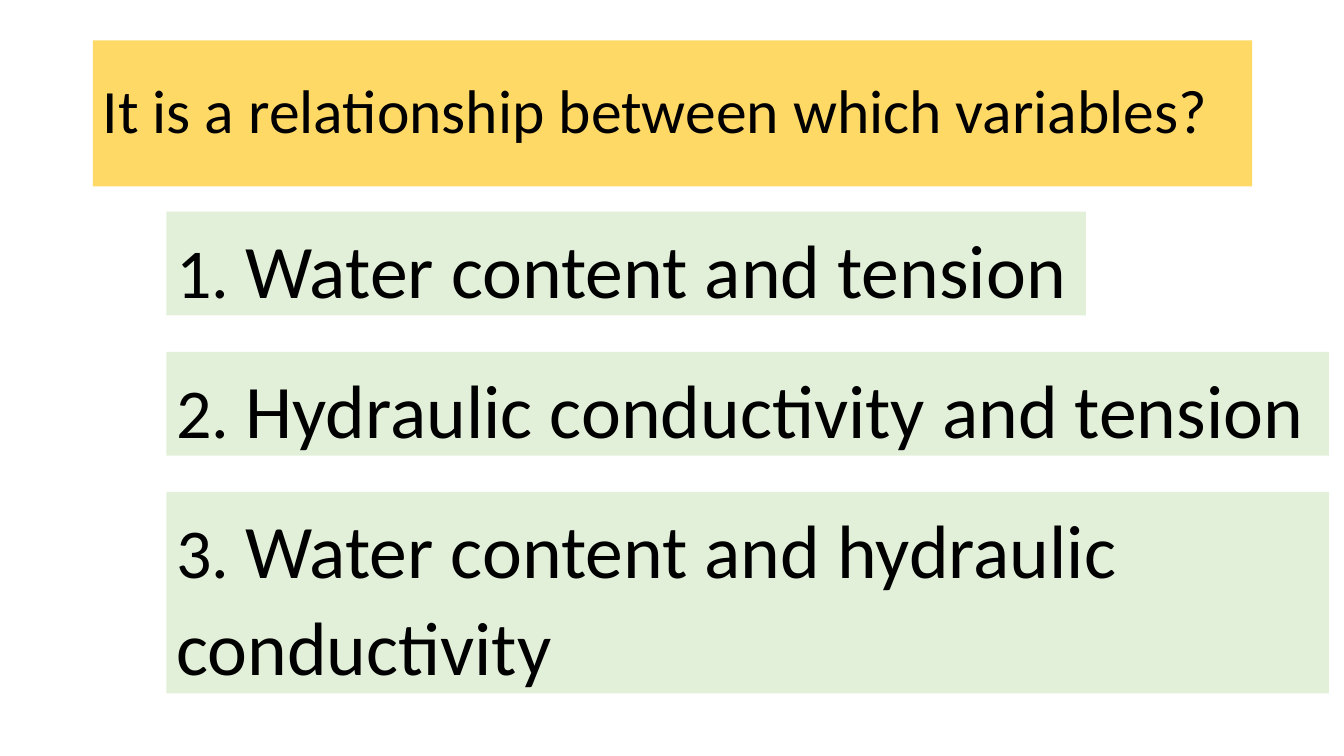
"""Build the question slide with its three answer options."""
import dataclasses

import pptx
import pptx.dml.color
import pptx.enum.text
import pptx.util


@dataclasses.dataclass(frozen=True)
class Theme:
    """Colours, font and type sizes of the slide."""
    font: str = "Calibri"
    ink: str = "000000"
    question_fill: str = "FFD966"
    answer_fill: str = "E2F0D9"
    question_size: int = 44
    number_size: int = 50
    answer_size: int = 54


class QuizSlide:
    """A title-only slide with a question and numbered answers."""

    EMU_PER_PX = 9144

    def __init__(self, deck, theme):
        """Add the slide to the deck."""
        self.theme = theme
        self.slide = deck.slides.add_slide(deck.slide_layouts[5])

    @classmethod
    def px(cls, length):
        """Turn whole px into EMU."""
        return pptx.util.Emu(length * cls.EMU_PER_PX)

    def fill(self, box, colour):
        """Give a box a plain fill."""
        box.fill.solid()
        box.fill.fore_color.rgb = pptx.dml.color.RGBColor.from_string(colour)

    def style(self, paragraph, size, spacing):
        """Set the font and line spacing of a paragraph."""
        paragraph.alignment = pptx.enum.text.PP_ALIGN.LEFT
        paragraph.line_spacing = spacing
        paragraph.font.name = self.theme.font
        paragraph.font.size = pptx.util.Pt(size)
        paragraph.font.color.rgb = pptx.dml.color.RGBColor.from_string(self.theme.ink)

    def question(self, wording, left, top, width, height):
        """Place the question in the title placeholder."""
        title = self.slide.shapes.title
        title.left, title.top, title.width, title.height = map(
            self.px, (left, top, width, height))
        self.fill(title, self.theme.question_fill)
        frame = title.text_frame
        frame.text = wording
        frame.auto_size = pptx.enum.text.MSO_AUTO_SIZE.NONE
        frame.vertical_anchor = pptx.enum.text.MSO_ANCHOR.MIDDLE
        self.style(frame.paragraphs[0], self.theme.question_size, 0.9)

    def answer(self, number, wording, left, top, width, height, wrap):
        """Place one numbered answer on a tinted box."""
        option = self.slide.shapes.add_textbox(
            *map(self.px, (left, top, width, height)))
        self.fill(option, self.theme.answer_fill)
        frame = option.text_frame
        frame.word_wrap = wrap
        frame.auto_size = pptx.enum.text.MSO_AUTO_SIZE.SHAPE_TO_FIT_TEXT
        line = frame.paragraphs[0]
        self.style(line, self.theme.answer_size, 1.07)
        line.space_after = pptx.util.Pt(8)
        label = line.add_run()
        label.text = f"{number}. "
        label.font.size = pptx.util.Pt(self.theme.number_size)
        line.add_run().text = wording


def main():
    """Build and save the deck."""
    deck = pptx.Presentation()
    deck.slide_width = QuizSlide.px(1333)
    deck.slide_height = QuizSlide.px(750)
    quiz = QuizSlide(deck, Theme())
    quiz.question("It is a relationship between which variables?", 92, 40, 1150, 145)

    answers = (
        ("Water content and tension", 912, 103, False),
        ("Hydraulic conductivity and tension", 1153, 103, False),
        ("Water content and hydraulic conductivity", 1153, 200, True),
    )
    top, gap = 210, 36
    for number, (wording, width, height, wrap) in enumerate(answers, 1):
        quiz.answer(number, wording, 165, top, width, height, wrap)
        top += height + gap
    deck.save("out.pptx")


if __name__ == "__main__":
    main()
